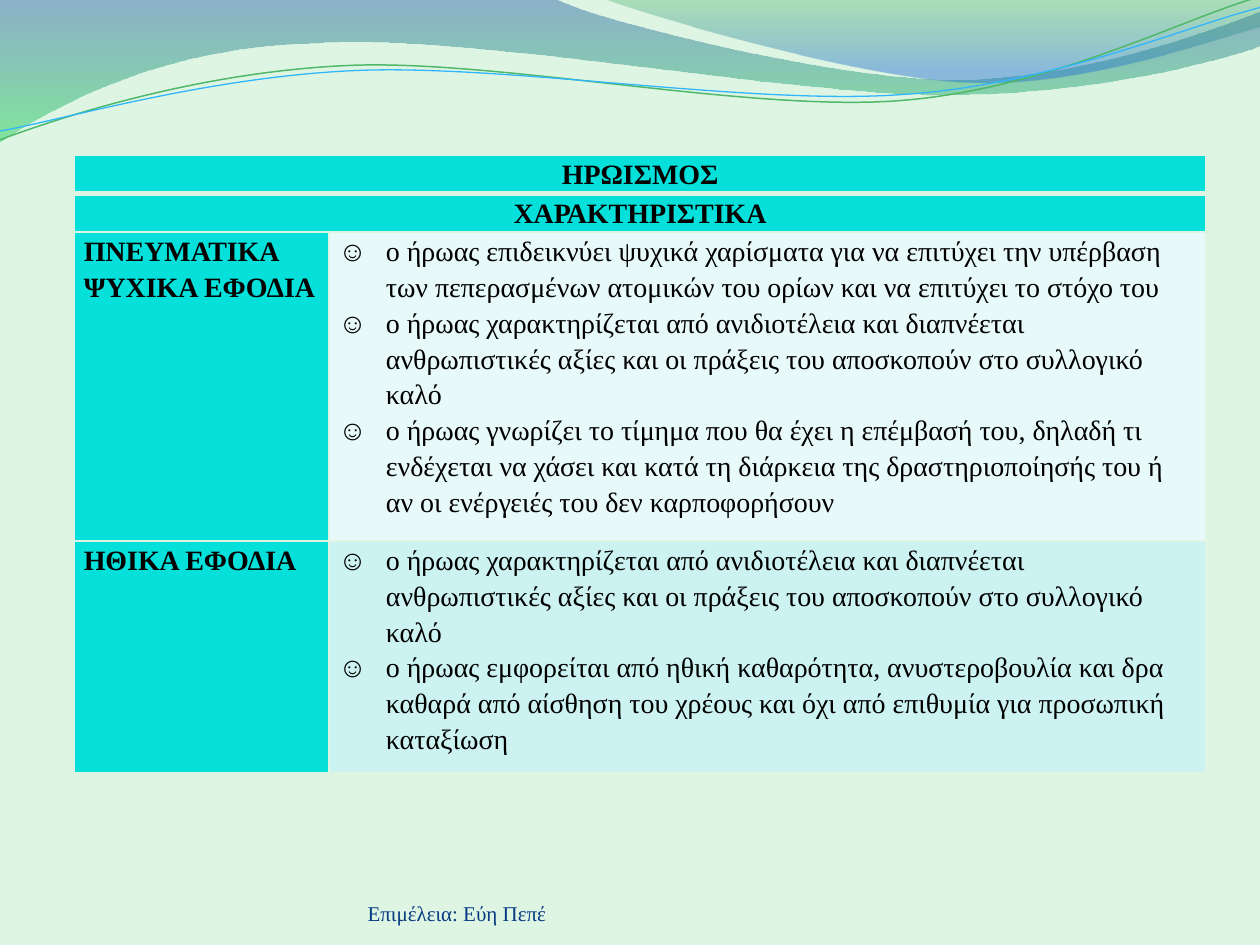
from lxml.etree import SubElement
from pptx import Presentation
from pptx.dml.color import RGBColor
from pptx.enum.text import MSO_ANCHOR, PP_ALIGN
from pptx.oxml.ns import qn
from pptx.util import Cm, Pt

MINT = RGBColor(0xDE, 0xF5, 0xE4)
TURQ = RGBColor(0x05, 0xE0, 0xDB)
PALE = RGBColor(0xE7, 0xF9, 0xF8)
AQUA = RGBColor(0xCC, 0xF3, 0xF1)
NAVY = RGBColor(0x07, 0x3B, 0x81)
BLACK = RGBColor(0, 0, 0)
BLUE = RGBColor(0x29, 0x60, 0xA7)
LIME = RGBColor(0x35, 0xDA, 0x5E)
GREEN = RGBColor(0x36, 0xA7, 0x52)
AZURE = RGBColor(0x24, 0x72, 0xD3)
LEAF = RGBColor(0x50, 0xB8, 0x6A)
SKY = RGBColor(0x31, 0xB6, 0xFD)
INCH = 2.54
FONT = "Times New Roman"

deck = Presentation()
deck.slide_width, deck.slide_height = Cm(25.4), Cm(19.05)
slide = deck.slides.add_slide(deck.slide_layouts[6])
slide.background.fill.solid()
slide.background.fill.fore_color.rgb = MINT


def trace(start, steps, close):
    flat = [*start, *(v for step in steps for v in step)]
    spots = [(Cm(x * INCH), Cm(y * INCH)) for x, y in zip(flat[::2], flat[1::2])]
    pen = slide.shapes.build_freeform(*spots[0], scale=1.0)
    pen.add_line_segments(spots[1:], close=close)
    shape = pen.convert_to_shape()
    shape.shadow.inherit = False
    lines = iter(list(shape._element.spPr.iter(qn("a:lnTo"))))
    for step in steps:
        first = next(lines)
        if len(step) == 6:
            first.tag = qn("a:cubicBezTo")
            for _ in range(2):
                extra = next(lines)
                first.append(extra[0])
                extra.getparent().remove(extra)
    return shape


def write(para, text, **look):
    run = para.add_run()
    run.text = text
    look = {"name": FONT, "size": Pt(16), "bold": False, **look}
    run.font.color.rgb = look.pop("color", BLACK)
    for key, val in look.items():
        setattr(run.font, key, val)


waves = [
    ((0, 0), [(4.4, -0.01), (4.76, 0.17, 6.64, 0.63, 7.58, 0.63),
              (8.53, 0.63, 9.58, 0.26, 10, 0.09), (10.01, 0.36),
              (9.83, 0.44, 8.7, 0.76, 7.46, 0.75), (6.22, 0.75, 3.82, 0.28, 2.57, 0.34),
              (1.29, 0.36, 0.46, 0.83, -0.01, 1.13)],
     [(0, BLUE, 45), (1, LIME, 55)]),
    ((4.79, -0.01), [(5.09, 0.11, 6.82, 0.62, 7.69, 0.65),
                     (8.56, 0.69, 9.61, 0.32, 10, 0.21), (10, 0)],
     [(0, GREEN, 30), (0.8, AZURE, 45)]),
]
for start, steps, stops in waves:
    wave = trace(start, steps, True)
    wave.line.fill.background()
    wave.fill.gradient()
    wave.fill.gradient_angle = 270
    for stop, (place, color, _) in zip(wave.fill.gradient_stops, stops):
        stop.position, stop.color.rgb = place, color
    tints = wave._element.spPr.iter(qn("a:srgbClr"))
    for tint, (_, _, alpha) in zip(tints, stops):
        SubElement(tint, qn("a:alpha"), val=str(alpha * 1000))

curves = [
    ((0, 1.11), [(0.48, 0.93, 1.58, 0.57, 2.77, 0.52), (3.95, 0.47, 5.93, 0.89, 7.13, 0.8),
                 (8.33, 0.71, 9.38, 0.15, 9.98, -0.02)], LEAF, 0.85),
    ((0, 1.04), [(0.47, 0.96, 1.64, 0.61, 2.83, 0.56), (4.03, 0.51, 5.97, 0.84, 7.17, 0.75),
                 (8.36, 0.67, 9.41, 0.21, 10, 0.06)], SKY, 0.75),
]
for start, steps, color, width in curves:
    curve = trace(start, steps, False)
    curve.fill.background()
    curve.line.color.rgb, curve.line.width = color, Pt(width)

frame = slide.shapes.add_textbox(Cm(7.41), Cm(17.65), Cm(9.32), Cm(1.02)).text_frame
setup = {"word_wrap": True, "vertical_anchor": MSO_ANCHOR.BOTTOM, "margin_left": 0,
         "margin_right": 0, "margin_top": 0, "margin_bottom": 0}
for key, val in setup.items():
    setattr(frame, key, val)
write(frame.paragraphs[0], "Επιμέλεια: Εύη Πεπέ", size=Pt(12), color=NAVY)

shared = ("ο ήρωας χαρακτηρίζεται από ανιδιοτέλεια και διαπνέεται ανθρωπιστικές αξίες "
          "και οι πράξεις του αποσκοπούν στο συλλογικό καλό")
rows = [
    (0.7, "ΗΡΩΙΣΜΟΣ", [], TURQ),
    (0.72, "ΧΑΡΑΚΤΗΡΙΣΤΙΚΑ", [], TURQ),
    (6.07, "ΠΝΕΥΜΑΤΙΚΑ ΨΥΧΙΚΑ ΕΦΟΔΙΑ", [
        "ο ήρωας επιδεικνύει ψυχικά χαρίσματα για να επιτύχει την υπέρβαση των "
        "πεπερασμένων ατομικών του ορίων και να επιτύχει το στόχο του",
        shared,
        "ο ήρωας γνωρίζει το τίμημα που θα έχει η επέμβασή του, δηλαδή τι ενδέχεται να "
        "χάσει και κατά τη διάρκεια της δραστηριοποίησής του ή αν οι ενέργειές του δεν "
        "καρποφορήσουν"], PALE),
    (4.5, "ΗΘΙΚΑ ΕΦΟΔΙΑ", [
        shared,
        "ο ήρωας εμφορείται από ηθική καθαρότητα, ανυστεροβουλία και δρα καθαρά από "
        "αίσθηση του χρέους και όχι από επιθυμία για προσωπική καταξίωση"], AQUA),
]
table = slide.shapes.add_table(4, 2, Cm(1.5), Cm(3.12), Cm(22.81), Cm(11.99)).table
table.columns[0].width, table.columns[1].width = Cm(5.13), Cm(17.68)
for r, (height, head, items, shade) in enumerate(rows):
    table.rows[r].height = Cm(height)
    for c, fill in enumerate((TURQ, shade)):
        cell = table.cell(r, c)
        inset = {"margin_left": Cm(0.19), "margin_right": Cm(0.3 if c else 0.19),
                 "margin_top": 0, "margin_bottom": 0}
        for key, val in inset.items():
            setattr(cell, key, val)
        for side in "LRTB":
            thick = 3 if (r, side) in ((0, "B"), (1, "T")) else 1
            edge = SubElement(cell._tc.get_or_add_tcPr(), qn("a:ln" + side), w=str(Pt(thick)))
            SubElement(SubElement(edge, qn("a:solidFill")), qn("a:srgbClr"), val=str(MINT))
        cell.fill.solid()
        cell.fill.fore_color.rgb = fill
    label = table.cell(r, 0)
    para = label.text_frame.paragraphs[0]
    para.line_spacing = 1.15
    write(para, head, bold=True)
    body = table.cell(r, 1).text_frame
    if not items:
        label.merge(table.cell(r, 1))
        para.alignment = PP_ALIGN.CENTER
        SubElement(body.paragraphs[0]._p, qn("a:endParaRPr"), sz="1000")
    for i, item in enumerate(items):
        para = body.add_paragraph() if i else body.paragraphs[0]
        para.line_spacing = 1.15
        props = para._p.get_or_add_pPr()
        props.set("marL", str(Cm(0.96)))
        props.set("indent", str(-Cm(0.96)))
        SubElement(props, qn("a:buFont"), typeface=FONT)
        SubElement(props, qn("a:buChar"), char="☺")
        write(para, item)

deck.save("out.pptx")
